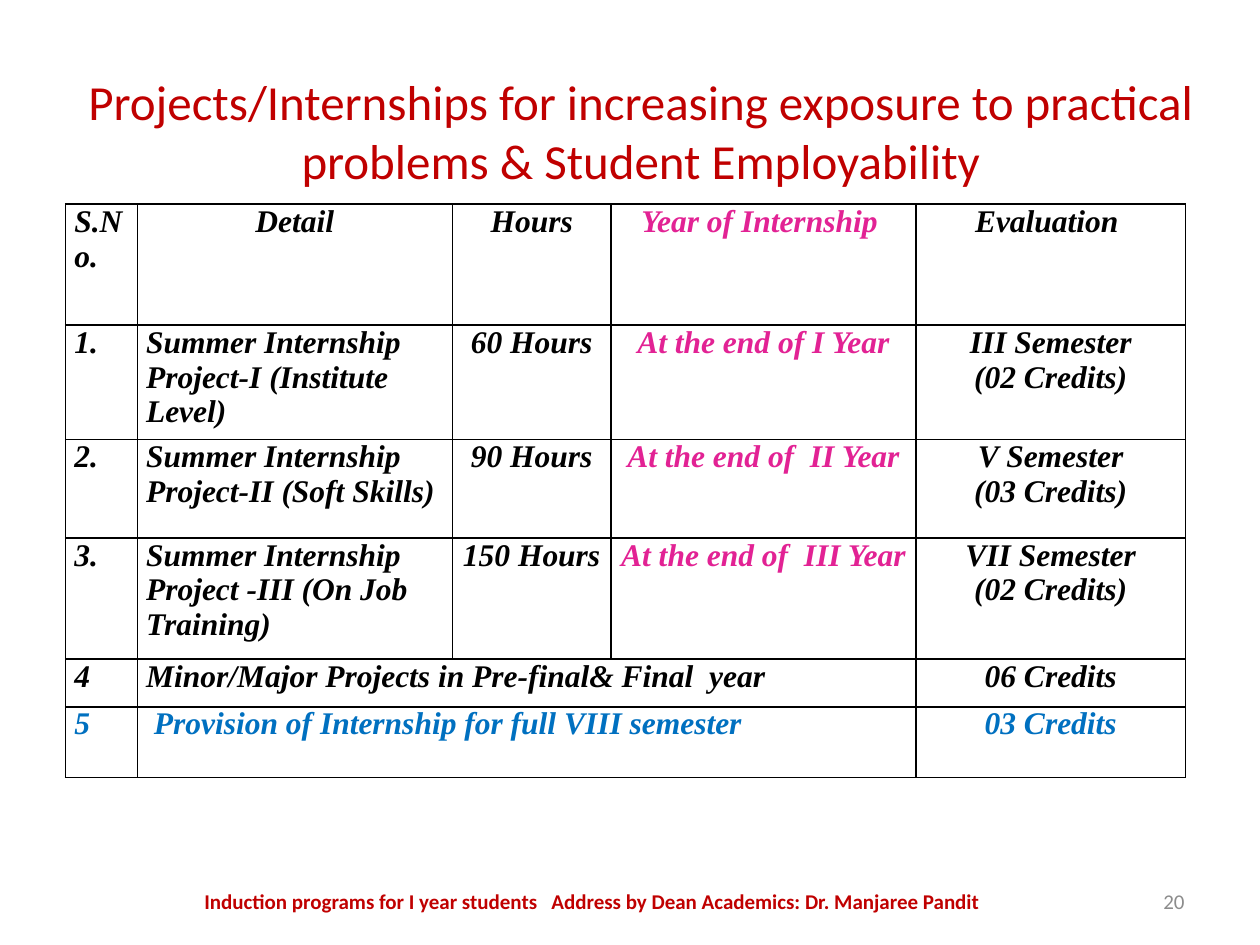
"""Build the slide on projects and internships for student employability."""
from lxml import etree
from pptx import Presentation
from pptx.dml.color import RGBColor
from pptx.enum.text import MSO_ANCHOR, PP_ALIGN
from pptx.oxml.ns import qn
from pptx.util import Inches, Pt

LEFT, CENTER, RIGHT, JUSTIFY = PP_ALIGN.LEFT, PP_ALIGN.CENTER, PP_ALIGN.RIGHT, PP_ALIGN.JUSTIFY
TOP, MIDDLE = MSO_ANCHOR.TOP, MSO_ANCHOR.MIDDLE
BLACK = RGBColor(0x00, 0x00, 0x00)
RED = RGBColor(0xC0, 0x00, 0x00)
PINK = RGBColor(0xE2, 0x22, 0x94)
BLUE = RGBColor(0x00, 0x70, 0xC0)
GREY = RGBColor(0x8C, 0x8C, 0x8C)

TITLE = "Projects/Internships for increasing exposure to practical problems & Student Employability"
FOOTER = "Induction programs for I year students   Address by Dean Academics: Dr. Manjaree Pandit "
PAGE = "20"
INTERNSHIPS = [
    ("S.No.", "Detail", "Hours", "Year of Internship ", "Evaluation "),
    ("1.", "Summer Internship Project-I (Institute Level)", "60 Hours",
     "At the end of I Year", "III Semester\n(02 Credits)"),
    ("2.", "Summer Internship Project-II (Soft Skills)", "90 Hours",
     "At the end of  II Year", "V Semester\n(03 Credits)"),
    ("3.", "Summer Internship\nProject -III (On Job Training)", "150 Hours",
     "At the end of  III Year", "VII Semester\n(02 Credits)"),
    ("4", "Minor/Major Projects in Pre-final& Final  year", None, None, "06 Credits"),
    ("5", " Provision of Internship for full VIII semester", None, None, "03 Credits"),
]
COLUMN_WIDTHS = [0.57, 2.5, 1.26, 2.42, 2.14]
ROW_HEIGHTS = [0.96, 0.91, 0.78, 0.96, 0.38, 0.56]
COLUMN_ALIGNS = [JUSTIFY, LEFT, CENTER, CENTER, CENTER]
HEADER_ALIGNS = [LEFT, CENTER, CENTER, CENTER, CENTER]
YEAR_COLUMN = 3


def write(frame, text, size, color, align, font="Calibri", bold=False, italic=False):
    frame.word_wrap = True
    frame.text = text
    for paragraph in frame.paragraphs:
        paragraph.alignment = align
        for run in paragraph.runs:
            run.font.name, run.font.size = font, Pt(size)
            run.font.bold, run.font.italic = bold, italic
            run.font.color.rgb = color


def add_footer_text(slide, box, text, color, align, bold=False):
    frame = slide.shapes.add_textbox(*map(Inches, box)).text_frame
    write(frame, text, 12, color, align, bold=bold)
    frame.vertical_anchor = MIDDLE


def add_borders(cell):
    properties = cell._tc.get_or_add_tcPr()
    for position, side in enumerate(("a:lnL", "a:lnR", "a:lnT", "a:lnB")):
        line = etree.Element(qn(side), w=str(Pt(1)))
        fill = etree.SubElement(line, qn("a:solidFill"))
        etree.SubElement(fill, qn("a:srgbClr"), val=str(BLACK))
        properties.insert(position, line)


def add_internship_table(slide):
    table = slide.shapes.add_table(
        len(ROW_HEIGHTS), len(COLUMN_WIDTHS), Inches(0.52), Inches(1.62),
        Inches(sum(COLUMN_WIDTHS)), Inches(sum(ROW_HEIGHTS))).table
    table.first_row = table.horz_banding = False
    for column, width in zip(table.columns, COLUMN_WIDTHS):
        column.width = Inches(width)
    for row, height in zip(table.rows, ROW_HEIGHTS):
        row.height = Inches(height)

    for r, entries in enumerate(INTERNSHIPS):
        aligns = COLUMN_ALIGNS if r else HEADER_ALIGNS
        row_color = BLUE if r == len(INTERNSHIPS) - 1 else BLACK
        for c, entry in enumerate(entries):
            cell = table.cell(r, c)
            cell.fill.background()
            add_borders(cell)
            cell.margin_left = cell.margin_right = Inches(0.07)
            cell.margin_top = cell.margin_bottom = 0
            if entry is not None:
                color = PINK if c == YEAR_COLUMN else row_color
                write(cell.text_frame, entry, 18, color, aligns[c], "Times New Roman", True, True)
        if None in entries:
            table.cell(r, 1).merge(table.cell(r, YEAR_COLUMN))


def main():
    presentation = Presentation()
    presentation.slide_width, presentation.slide_height = Inches(10), Inches(7.5)
    slide = presentation.slides.add_slide(presentation.slide_layouts[5])

    title = slide.shapes.title
    title.left, title.top, title.width, title.height = map(Inches, (0.52, 0.52, 9.13, 1.04))
    write(title.text_frame, TITLE, 28, RED, CENTER)
    title.text_frame.vertical_anchor = TOP

    add_internship_table(slide)
    add_footer_text(slide, (0.27, 6.95, 8.9, 0.4), FOOTER, RED, CENTER, bold=True)
    add_footer_text(slide, (7.17, 6.95, 2.33, 0.4), PAGE, GREY, RIGHT)
    presentation.save("out.pptx")


if __name__ == "__main__":
    main()
